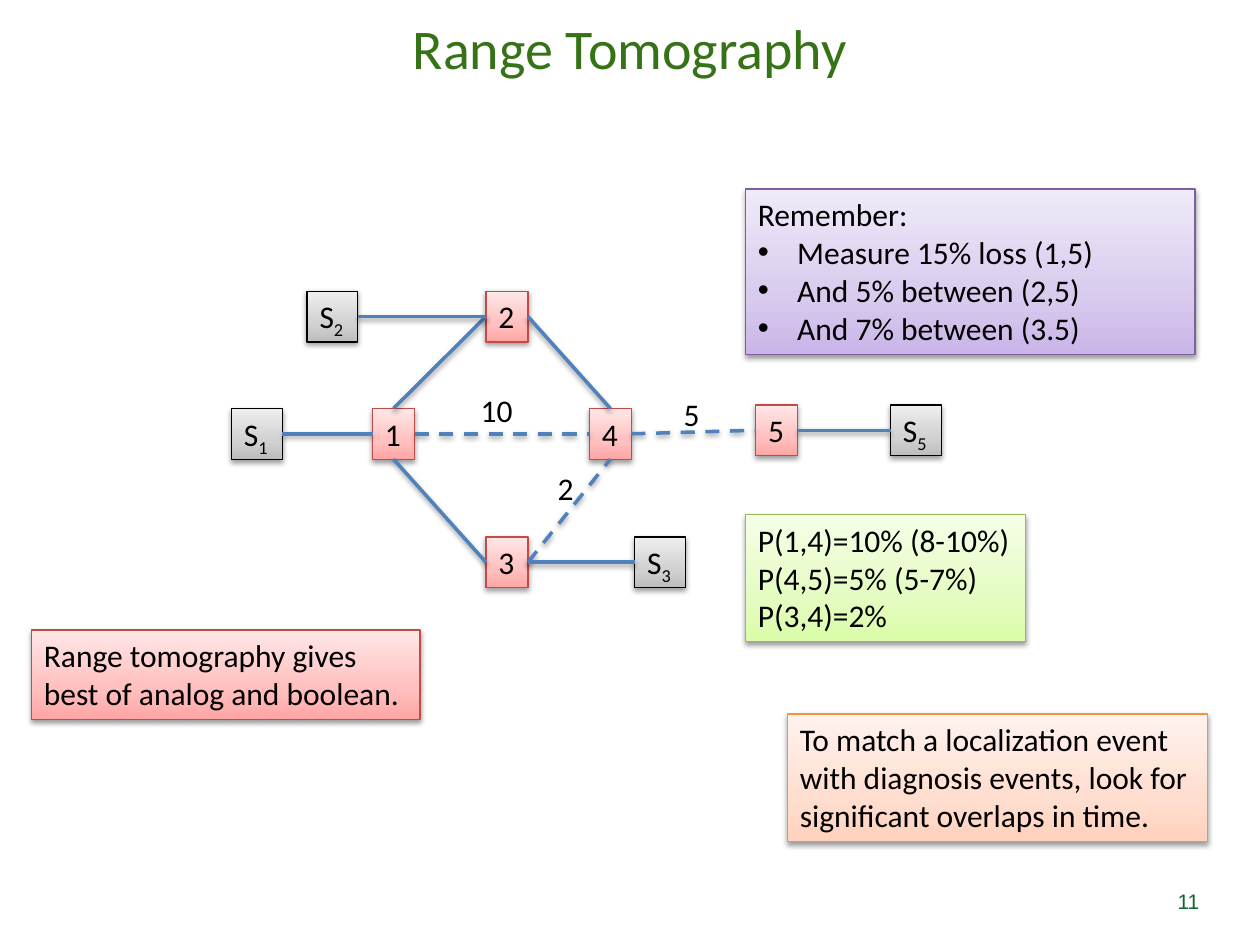
from dataclasses import dataclass
from pptx import Presentation
from pptx import util as u
from pptx.dml import color
from pptx.enum import dml, shapes, text
from pptx.oxml import parse_xml
from pptx.oxml import ns

Pt = u.Pt


@dataclass(frozen=True)
class Theme:
    face: str = "Calibri"
    plain: str = "Arial"
    head: float = 32
    body: float = 18
    small: float = 12
    ink: str = "000000"
    title: str = "367317"
    page: str = "106636"
    link: str = "4F81BD"
    edge: float = 0.75
    wire: float = 2
    gray: tuple = ("000000", "BDBDBD", "D1D1D1", "EEEEEE")
    red: tuple = ("BF4C48", "FFA6A5", "FFC0BF", "FFE7E7")
    green: tuple = ("98B955", "DAFDA7", "E4FCC2", "F5FFE7")
    purple: tuple = ("7D60A0", "C9B5E8", "D8CBEE", "F0EAF9")
    orange: tuple = ("F69240", "FFD2BD", "FFDED0", "FFF2ED")


T = Theme()
ALIGN = text.PP_ALIGN
TOP, LEFT, BASE, RIGHT = range(4)


def rgb(code):
    return color.RGBColor.from_string(code)


def node(tag, attrs="", body=""):
    return parse_xml(f"<a:{tag} {ns.nsdecls('a')} {attrs}>{body}</a:{tag}>")


def shade(item):
    item._element.spPr.append(node("effectLst", body=(
        '<a:outerShdw blurRad="40000" dist="20000" dir="5400000"'
        ' rotWithShape="0"><a:srgbClr val="000000"><a:alpha val="38000"/>'
        '</a:srgbClr></a:outerShdw>')))


def write(shape, words, wrap=True, size=T.body, face=T.face, ink=T.ink,
          align=ALIGN.LEFT, anchor=text.MSO_ANCHOR.TOP):
    frame = shape.text_frame
    frame.text = words
    frame.word_wrap = wrap
    frame.vertical_anchor = anchor
    for para in frame.paragraphs:
        para.alignment = align
        for run in para.runs:
            style(run, size, face, ink)
    return frame


def style(run, size=T.body, face=T.face, ink=T.ink):
    run.font.size = Pt(size)
    run.font.name = face
    run.font.color.rgb = rgb(ink)


def place(slide, box, words, **look):
    area = slide.shapes.add_textbox(*map(Pt, box))
    return write(area, words, **look)


def panel(slide, box, words, tone, wrap=True):
    shape = slide.shapes.add_shape(shapes.MSO_SHAPE.RECTANGLE, *map(Pt, box))
    edge, *stops = tone
    shape.fill.gradient()
    shape.fill.gradient_angle = 90
    ramp = shape._element.spPr.find(".//" + ns.qn("a:gsLst"))
    for stop in list(ramp):
        ramp.remove(stop)
    for pos, code in zip((0, 35, 100), stops):
        ramp.append(node("gs", f'pos="{pos * 1000}"',
                         f'<a:srgbClr val="{code}"/>'))
    shape.line.color.rgb = rgb(edge)
    shape.line.width = Pt(T.edge)
    shade(shape)
    frame = write(shape, words, wrap)
    frame.auto_size = text.MSO_AUTO_SIZE.SHAPE_TO_FIT_TEXT
    return shape


def bullet(para, hang=22.5):
    props = para._p.get_or_add_pPr()
    props.set("marL", str(Pt(hang)))
    props.set("indent", str(Pt(-hang)))
    props.append(node("buFont", 'typeface="Arial"'))
    props.append(node("buChar", 'char="•"'))


def remind(slide, box):
    shape = panel(slide, box, "Remember:\nMeasure 15% loss (1,5)\n"
                  "And 5% between (2,5)\nAnd 7% between (3.5)", T.purple)
    for para in shape.text_frame.paragraphs[1:]:
        bullet(para)


def join(slide, start, out, end, into, dash):
    line = slide.shapes.add_connector(shapes.MSO_CONNECTOR.STRAIGHT, 0, 0, 0, 0)
    line.begin_connect(start, out)
    line.end_connect(end, into)
    line.line.color.rgb = rgb(T.link)
    line.line.width = Pt(T.wire)
    if dash:
        line.line.dash_style = dml.MSO_LINE.DASH
    shade(line)


def graph(slide, box):
    left, top = box[:2]
    high, mid, side, low = 0, 67, 65, 140.4
    spots = {"S1": (0, mid), "S3": (230.4, low), "S2": (43.2, high),
             "S5": (376.6, side), "1": (80.6, mid), "2": (145.4, high),
             "3": (145.4, low), "4": (204.5, mid), "5": (299.5, side)}
    nodes = {}
    for name, (x, y) in spots.items():
        host = name[0] == "S"
        shape = panel(slide, (left + x, top + y, 29 if host else 24, 29),
                      name[0], T.gray if host else T.red, False)
        if host:
            run = shape.text_frame.paragraphs[0].add_run()
            run.text = name[1]
            style(run)
            run.font._element.set("baseline", "-25000")
        nodes[name] = shape

    links = (("S1", RIGHT, "1", LEFT, False), ("1", TOP, "2", LEFT, False),
             ("1", BASE, "3", LEFT, False), ("3", RIGHT, "4", BASE, True),
             ("2", RIGHT, "4", TOP, False), ("S2", RIGHT, "2", LEFT, False),
             ("1", RIGHT, "4", LEFT, True), ("4", RIGHT, "5", LEFT, True),
             ("5", RIGHT, "S5", LEFT, False), ("3", RIGHT, "S3", LEFT, False))
    for start, out, end, into, dash in links:
        join(slide, nodes[start], out, nodes[end], into, dash)

    for words, x, y, wide in (("10", 135.3, 53.3, 33), ("2", 179.3, 97.9, 24),
                              ("5", 251.3, 55.5, 24)):
        place(slide, (left + x, top + y, wide, 29), words, wrap=False)


def main():
    deck = Presentation()
    deck.slide_width, deck.slide_height = Pt(720), Pt(540)
    slide = deck.slides.add_slide(deck.slide_layouts[6])
    mid = text.MSO_ANCHOR.MIDDLE
    place(slide, (0, 0, 720, 53.3), "Range Tomography", size=T.head,
          ink=T.title, align=ALIGN.CENTER, anchor=mid)
    place(slide, (662.4, 500.4, 30, 29), "11", size=T.small, face=T.plain,
          ink=T.page, align=ALIGN.RIGHT, anchor=mid)
    remind(slide, (426, 108, 257, 94.5))
    panel(slide, (18, 360, 222, 51),
          "Range tomography gives best of analog and boolean.", T.red)
    panel(slide, (426, 294, 160, 72.7),
          "P(1,4)=10% (8-10%)\nP(4,5)=5% (5-7%)\nP(3,4)=2%", T.green, False)
    graph(slide, (132.3, 166.4, 405.6, 169.4))
    panel(slide, (450, 408, 240, 72.7),
          "To match a localization event with diagnosis events, "
          "look for significant overlaps in time.", T.orange)
    deck.save("out.pptx")


if __name__ == "__main__":
    main()
